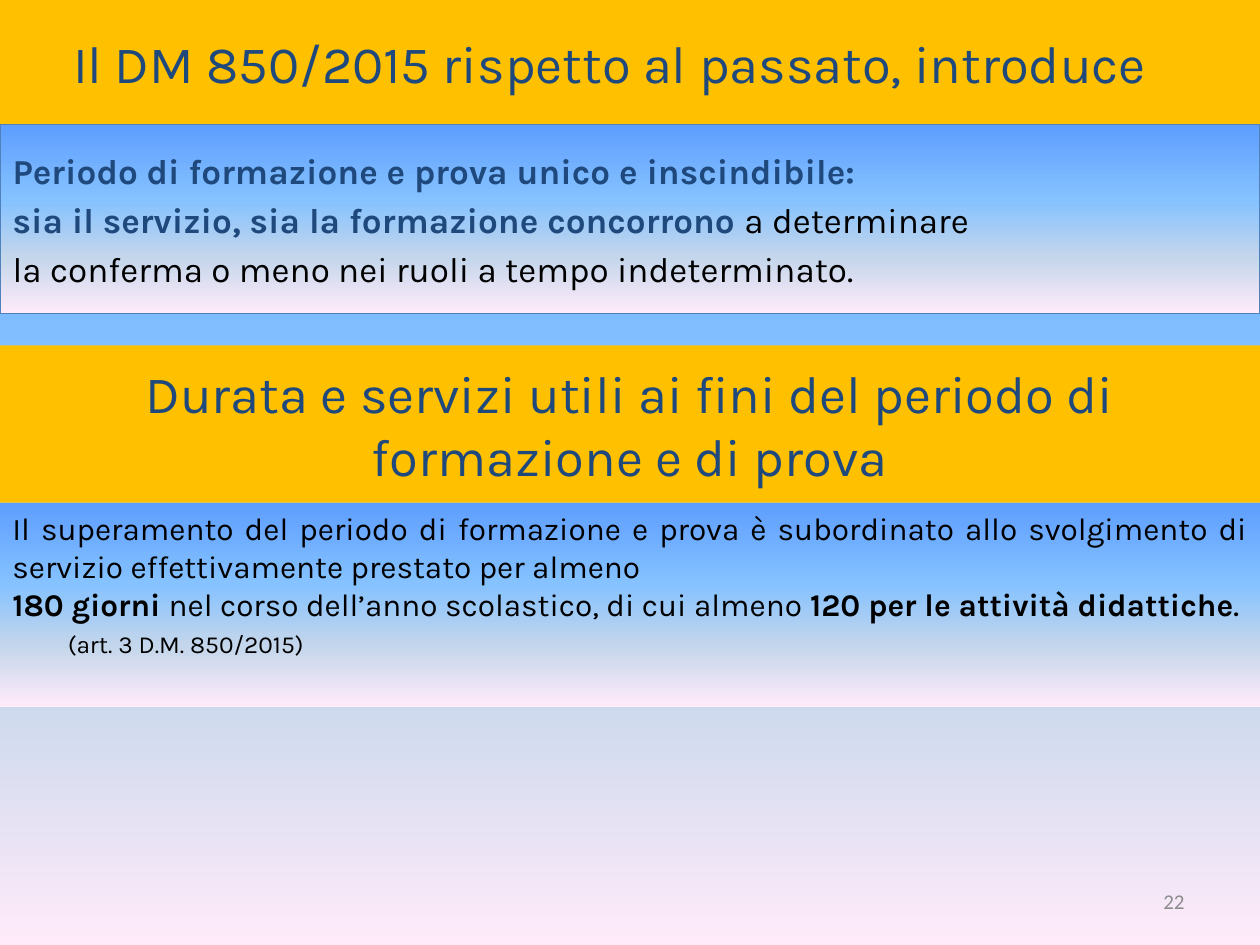
from lxml.etree import SubElement
from pptx import Presentation
from pptx.dml.color import RGBColor
from pptx.enum.shapes import MSO_SHAPE
from pptx.enum.text import MSO_ANCHOR, MSO_AUTO_SIZE, PP_ALIGN
from pptx.oxml.ns import qn
from pptx.util import Inches, Pt

NAVY, BLACK, GOLD, GREY = "1F497D", "000000", "FFC000", "8C8C8C"
SKY_STOPS = [(0, "5E9EFF"), (40, "85C2FF"), (70, "C4D6EB"), (100, "FFEBFA")]


def add_text(paragraph, text, size=18, color=BLACK, bold=False, font="Karla"):
    run = paragraph.add_run()
    run.text = text
    run.font.name = font
    run.font.size = Pt(size)
    run.font.bold = bold
    run.font.color.rgb = RGBColor.from_string(color)


def fill_sky(fill, element):
    """Fill with the four-stop gradient, running from top to bottom."""
    fill.gradient()
    gradient = element.find(".//" + qn("a:gradFill"))
    stops = gradient.find(qn("a:gsLst"))
    for stop in list(stops):
        stops.remove(stop)
    for position, color in SKY_STOPS:
        stop = SubElement(stops, qn("a:gs"), pos=str(position * 1000))
        SubElement(stop, qn("a:srgbClr"), val=color)
    gradient.find(qn("a:lin")).set("ang", str(90 * 60000))


presentation = Presentation()
presentation.slide_width, presentation.slide_height = Inches(10), Inches(7.5)
slide = presentation.slides.add_slide(presentation.slide_layouts[1])
fill_sky(slide.background.fill, slide.element)

# Four full-width bands: two headings, each with its text below
title, body = slide.placeholders
subtitle, details = [
    slide.shapes.add_shape(MSO_SHAPE.RECTANGLE, 0, 0, Inches(10), Inches(1))
    for _ in range(2)
]
bands = [
    (title, 0, 0.99, MSO_ANCHOR.MIDDLE),
    (body, 0.99, 1.5, MSO_ANCHOR.MIDDLE),
    (subtitle, 2.74, 1.25, MSO_ANCHOR.MIDDLE),
    (details, 3.99, 1.62, MSO_ANCHOR.TOP),
]
for shape, top, height, anchor in bands:
    shape.left, shape.top = 0, Inches(top)
    shape.width, shape.height = Inches(10), Inches(height)
    shape.text_frame.word_wrap = True
    shape.text_frame.auto_size = MSO_AUTO_SIZE.NONE
    shape.text_frame.vertical_anchor = anchor
for shape in (subtitle, details):
    shape.shadow.inherit = False
    shape.line.fill.background()
for shape in (title, subtitle):
    shape.fill.solid()
    shape.fill.fore_color.rgb = RGBColor.from_string(GOLD)
for shape in (body, details):
    fill_sky(shape.fill, shape.element)
body.line.color.rgb = RGBColor.from_string("4F81BD")
body.line.width = Pt(0.75)

# Headings
headings = [
    (title, "Il DM 850/2015 rispetto al passato, introduce", PP_ALIGN.LEFT),
    (subtitle, "Durata e servizi utili ai fini del periodo di formazione e di prova",
     PP_ALIGN.CENTER),
]
for shape, text, alignment in headings:
    paragraph = shape.text_frame.paragraphs[0]
    paragraph.alignment = alignment
    add_text(paragraph, text, size=30, color=NAVY)
title.text_frame.margin_left = Inches(0.58)

# Texts: each paragraph is a list of runs
strong = {"size": 20, "color": NAVY, "bold": True}
texts = [
    (body, [
        [("Periodo di formazione e prova unico e inscindibile:", strong)],
        [("sia il servizio, sia la formazione concorrono ", strong),
         ("a determinare", {"size": 20})],
        [("la conferma o meno nei ruoli a tempo indeterminato.", {"size": 20})],
    ]),
    (details, [
        [("Il superamento del periodo di formazione e prova è subordinato allo "
          "svolgimento di servizio effettivamente prestato per almeno", {})],
        [("180 giorni ", {"bold": True}),
         ("nel corso dell’anno scolastico, di cui almeno ", {}),
         ("120 per le attività didattiche", {"bold": True}),
         (".", {"size": 14, "bold": True})],
        [("(art. 3 D.M. 850/2015)", {"size": 14})],
    ]),
]
for shape, paragraphs in texts:
    frame = shape.text_frame
    for index, runs in enumerate(paragraphs):
        paragraph = frame.add_paragraph() if index else frame.paragraphs[0]
        paragraph.alignment = PP_ALIGN.JUSTIFY
        properties = paragraph._p.get_or_add_pPr()
        properties.set("marL", "0")
        properties.set("indent", "0")
        SubElement(properties, qn("a:buNone"))
        for text, style in runs:
            add_text(paragraph, text, **style)

# The reference to the article is indented
reference = details.text_frame.paragraphs[-1]
reference._p.get_or_add_pPr().set("marL", str(Inches(0.44)))
reference.space_before = Pt(4)

# Slide number
number = slide.shapes.add_textbox(Inches(7.17), Inches(6.95), Inches(2.33), Inches(0.4))
number.text_frame.word_wrap = True
number.text_frame.vertical_anchor = MSO_ANCHOR.MIDDLE
number.text_frame.paragraphs[0].alignment = PP_ALIGN.RIGHT
add_text(number.text_frame.paragraphs[0], "22", size=12, color=GREY, font="Calibri")

presentation.save("out.pptx")
